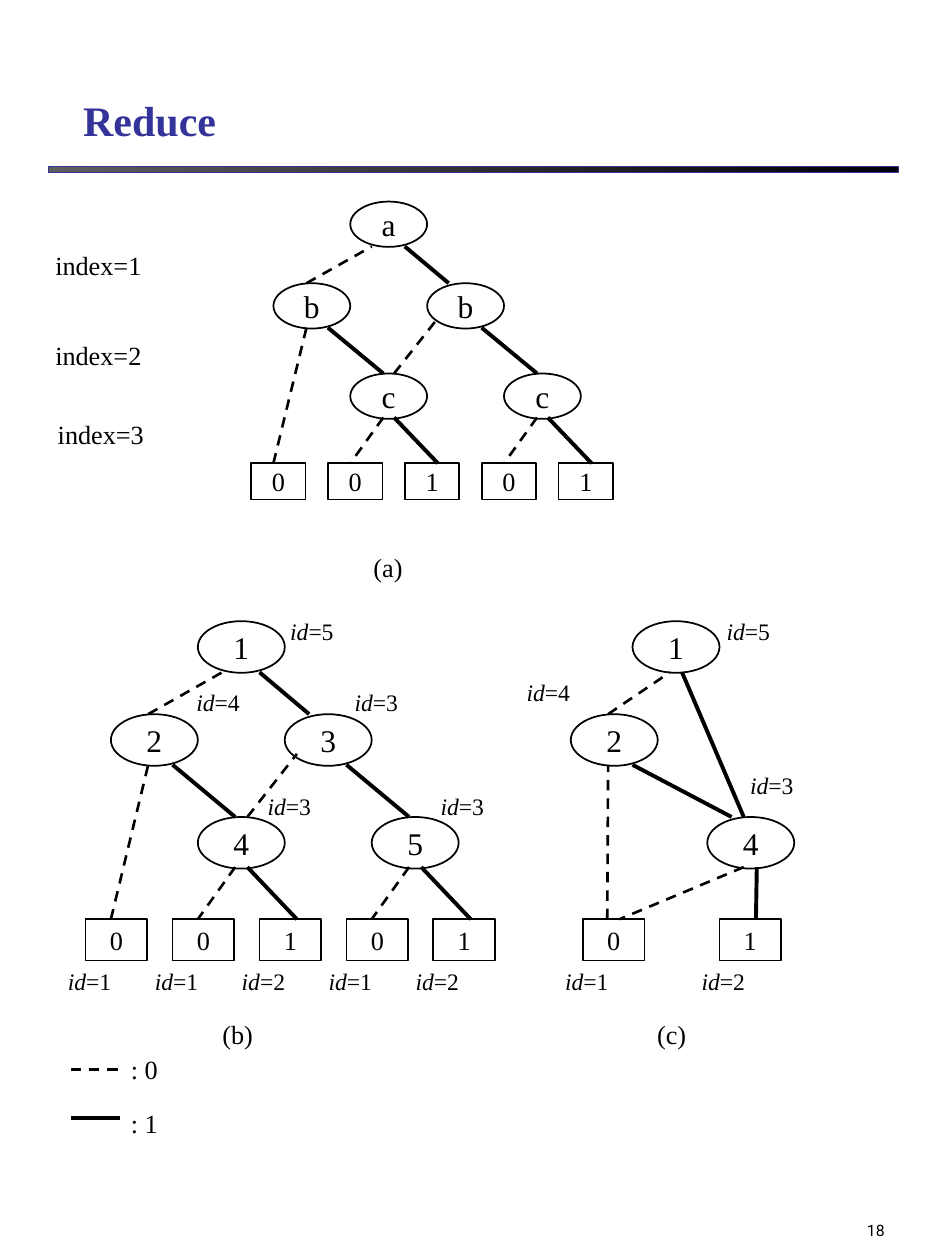
import pptx
import pptx.util
import pptx.dml.color
import pptx.enum.dml
import pptx.enum.shapes
import pptx.enum.text
import pptx.oxml
import pptx.oxml.ns

Inches, Pt = pptx.util.Inches, pptx.util.Pt
ALIGN = pptx.enum.text.PP_ALIGN
ANCHOR = pptx.enum.text.MSO_ANCHOR
SHAPE = pptx.enum.shapes.MSO_SHAPE
SERIF = "Times New Roman"

# Node rows and line ends, in node heights below the top of a tree
ROWS = (0, 1.8, 3.79, 5.77)
ENDS = (0.99, 2.78, 4.76)
LEAF_W, LEAF_H = 0.71, 0.8

# Nodes are (column, row); leaves are (column, value).
# Edges are (branch, x1, y1, x2, y2), in node widths and heights.
FULL_NODES = [(1, 0), (0, 1), (2, 1), (1, 2), (3, 2)]
FULL_LEAVES = [(k - 0.29, v) for k, v in enumerate("00101")]
FULL_EDGES = [
    (0, 0.43, ROWS[1], 1.28, ENDS[0]),
    (0, 0, ROWS[3], 0.43, ENDS[1]),
    (0, 1.43, ENDS[2], 1, ROWS[3]),
    (1, 1.57, ENDS[2], 2.14, ROWS[3]),
    (0, 3.43, ENDS[2], 3, ROWS[3]),
    (1, 3.57, ENDS[2], 4.14, ROWS[3]),
    (1, 0.71, ENDS[1], 1.43, ROWS[2]),
    (0, 1.57, ROWS[2], 2.14, 2.57),
    (1, 2.71, ENDS[1], 3.43, ROWS[2]),
    (1, 1.71, ENDS[0], 2.28, ROWS[1]),
]
FULL_IDS = [(5, 1.92, -0.2), (4, 0.84, 1.18), (3, 2.66, 1.18),
            (3, 1.66, 3.19), (3, 3.65, 3.19)]

SMALL_NODES = [(0.71, 0), (0, 1), (1.57, 2)]
SMALL_LEAVES = [(0.14, "0"), (1.71, "1")]
SMALL_EDGES = [
    (0, 0.43, ROWS[1], 1.14, ENDS[0]),
    (0, 0.42, ROWS[3], 0.43, ENDS[1]),
    (0, 1.99, ENDS[2], 0.56, ROWS[3]),
    (1, 2.14, ENDS[2], 2.13, ROWS[3]),
    (1, 0.71, ENDS[1], 1.85, ROWS[2]),
    (1, 1.28, ENDS[0], 1.99, ROWS[2]),
]
SMALL_IDS = [(5, 1.65, -0.2), (4, -0.65, 0.98), (3, 1.92, 2.77)]


def color(code):
    return pptx.dml.color.RGBColor.from_string(code)


def write(para, text, size, font=SERIF, code="000000", bold=False, italic=False):
    run = para.add_run()
    run.text = text
    face = run.font
    face.name, face.size = font, Pt(size)
    face.bold, face.italic = bold, italic
    face.color.rgb = color(code)


def label(shapes, x, y, w, h, parts, size=15, wrap=True):
    """Add a text box; parts are (text, italic) pairs."""
    box = shapes.add_textbox(Inches(x), Inches(y), Inches(w), Inches(h))
    box.text_frame.word_wrap = wrap
    for text, italic in parts:
        write(box.text_frame.paragraphs[0], text, size, italic=italic)
    return box


def mark(shapes, x, y, num):
    """Add an id label."""
    label(shapes, x, y, 1.08, 0.43, [("id", True), (f"={num}", False)], 13.5)


def node(shapes, kind, x, y, w, h, text, size):
    shape = shapes.add_shape(kind, Inches(x), Inches(y), Inches(w), Inches(h))
    shape.shadow.inherit = False
    shape.fill.background()
    shape.line.color.rgb = color("000000")
    shape.line.width = Pt(1)
    frame = shape.text_frame
    frame.word_wrap = False
    frame.vertical_anchor = ANCHOR.MIDDLE
    frame.paragraphs[0].alignment = ALIGN.CENTER
    write(frame.paragraphs[0], text, size)


def edge(shapes, branch, x1, y1, x2, y2):
    """Draw a dashed line for branch 0 and a thick one for branch 1."""
    line = shapes.add_connector(
        pptx.enum.shapes.MSO_CONNECTOR.STRAIGHT,
        Inches(x1), Inches(y1), Inches(x2), Inches(y2))
    line.line.color.rgb = color("000000")
    line.line.width = Pt(2.25 if branch else 1.5)
    if not branch:
        line.line.dash_style = pptx.enum.dml.MSO_LINE.DASH
    props = line._element.spPr
    props.append(pptx.oxml.parse_xml(
        f"<a:effectLst {pptx.oxml.ns.nsdecls('a')}/>"))


def tree(slide, left, top, wide, high, nodes, names, leaves, edges, caption,
         shift, ids=()):
    """Draw a decision diagram; wide and high are the size of one node."""
    shapes = slide.shapes.add_group_shape().shapes

    def place(x, y):
        return left + x * wide, top + y * high

    for (col, row), name in zip(nodes, names):
        node(shapes, SHAPE.OVAL, *place(col, ROWS[row]), wide, high, name, 18)
    for col, value in leaves:
        x, y = place(col, ROWS[3])
        node(shapes, SHAPE.RECTANGLE, x, y, LEAF_W * wide, LEAF_H * high,
             value, 15)
        if ids:
            mark(shapes, x - 0.24, y + LEAF_H * high, int(value) + 1)
    for branch, x1, y1, x2, y2 in edges:
        edge(shapes, branch, *place(x1, y1), *place(x2, y2))
    for num, x, y in ids:
        mark(shapes, *place(x, y), num)
    label(shapes, *place(shift, 7.57), wide, 0.41, [(caption, False)])


def legend(slide, left, top):
    shapes = slide.shapes.add_group_shape().shapes
    for branch, drop in enumerate((0, 0.43)):
        y = top + drop
        line = y + (0.13 if branch else 0.18)
        edge(shapes, branch, left, line, left + 0.39, line)
        label(shapes, left + 0.38, y, 0.44, 0.35, [(f": {branch}", False)])


def header(slide, left, top, width):
    title = slide.shapes.title
    title.left, title.top = Inches(left + 0.18), Inches(top)
    title.width, title.height = Inches(width - 0.37), Inches(0.69)
    frame = title.text_frame
    frame.vertical_anchor = ANCHOR.BOTTOM
    frame.paragraphs[0].alignment = ALIGN.LEFT
    write(frame.paragraphs[0], "Reduce", 24, code="333399", bold=True)

    bar = slide.shapes.add_shape(SHAPE.RECTANGLE, Inches(left),
                                 Inches(top + 0.81), Inches(width), Inches(0.05))
    bar.shadow.inherit = False
    bar.fill.gradient()
    bar.fill.gradient_angle = 0
    for stop, code in zip(bar.fill.gradient_stops, ("5F5F5F", "000000")):
        stop.color.rgb = color(code)
    bar.line.color.rgb = color("333399")
    bar.line.width = Pt(0.25)


def footer(slide, left, top, width, height):
    box = slide.shapes.add_textbox(Inches(left), Inches(top),
                                   Inches(width), Inches(height))
    frame = box.text_frame
    frame.word_wrap = True
    frame.vertical_anchor = ANCHOR.BOTTOM
    frame.paragraphs[0].alignment = ALIGN.RIGHT
    write(frame.paragraphs[0], "18", 9, font="Roboto")


def main():
    deck = pptx.Presentation()
    deck.slide_width, deck.slide_height = Inches(7.5), Inches(10)
    slide = deck.slides.add_slide(deck.slide_layouts[5])
    header(slide, 0.38, 0.51, 6.75)
    for num, (x, y) in enumerate([(0.34, 1.93), (0.34, 2.64), (0.36, 3.27)], 1):
        label(slide.shapes, x, y, 0.89, 0.35, [(f"index={num}", False)],
              wrap=False)
    legend(slide, 0.56, 8.31)
    tree(slide, 2.17, 1.6, 0.61, 0.36, FULL_NODES, "abbcc", FULL_LEAVES,
         FULL_EDGES, "(a)", 1.14)
    tree(slide, 0.88, 4.93, 0.69, 0.41, FULL_NODES, "12345", FULL_LEAVES,
         FULL_EDGES, "(b)", 1.14, FULL_IDS)
    tree(slide, 4.53, 4.93, 0.69, 0.41, SMALL_NODES, "124", SMALL_LEAVES,
         SMALL_EDGES, "(c)", 0.85, SMALL_IDS)
    footer(slide, 5.56, 9.22, 1.56, 0.67)
    deck.save("out.pptx")


if __name__ == "__main__":
    main()
